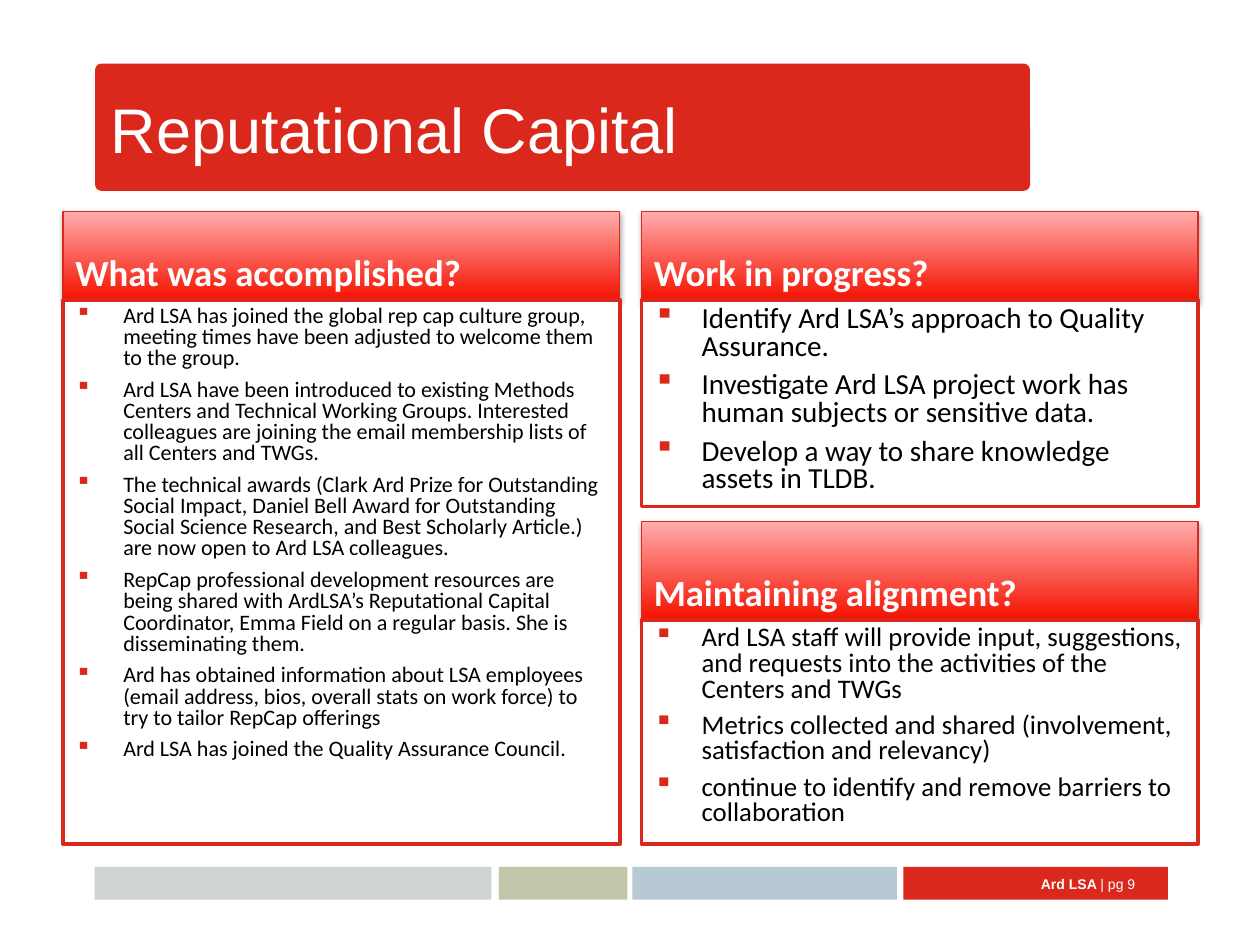
from dataclasses import dataclass

from lxml import etree
from pptx import Presentation
from pptx.dml.color import RGBColor
from pptx.enum.shapes import MSO_SHAPE
from pptx.enum.text import MSO_ANCHOR, PP_ALIGN
from pptx.oxml.ns import qn
from pptx.util import Pt

RECT, ROUND = MSO_SHAPE.RECTANGLE, MSO_SHAPE.ROUNDED_RECTANGLE
TOP, MIDDLE, BOTTOM = MSO_ANCHOR.TOP, MSO_ANCHOR.MIDDLE, MSO_ANCHOR.BOTTOM
LEFT, RIGHT = PP_ALIGN.LEFT, PP_ALIGN.RIGHT

RED, WHITE, BLACK = "DA291C", "FFFFFF", "000000"
GRAD_FROM, GRAD_TO = "F61100", "FFADAC"
PANEL_W, COL_1, COL_2 = 318.2, 36, 366.5
BAR_Y, BAR_H = 495.4, 18.7
INDENT = 27.36


@dataclass
class Bar:
    x: float
    w: float
    color: str


@dataclass
class Panel:
    x: float
    y: float
    head_h: float
    body_h: float
    heading: str
    size: float
    items: list[str]


BARS = [
    Bar(54, 226.8, "D0D3D4"),
    Bar(285.1, 73.4, "C3C6A8"),
    Bar(361.4, 151.2, "B7C9D3"),
    Bar(516.2, 151.2, RED),
]

PANELS = [
    Panel(COL_1, 121, 50.4, 311, "What was accomplished?", 12.6, [
        "Ard LSA has joined the global rep cap culture group, meeting times "
        "have been adjusted to welcome them to the group.",
        "Ard LSA have been introduced to existing Methods Centers and Technical "
        "Working Groups. Interested colleagues are joining the email membership "
        "lists of all Centers and TWGs.",
        "The technical awards (Clark Ard Prize for Outstanding Social Impact, "
        "Daniel Bell Award for Outstanding Social Science Research, and Best "
        "Scholarly Article.) are now open to Ard LSA colleagues.",
        "RepCap professional development resources are being shared with "
        "ArdLSA’s Reputational Capital Coordinator, Emma Field on a regular "
        "basis. She is disseminating them.",
        "Ard has obtained information about LSA employees (email address, bios, "
        "overall stats on work force) to try to tailor RepCap offerings",
        "Ard LSA has joined the Quality Assurance Council.",
    ]),
    Panel(COL_2, 121, 50.4, 118, "Work in progress?", 16.6, [
        "Identify Ard LSA’s approach to Quality Assurance.",
        "Investigate Ard LSA project work has human subjects or sensitive data.",
        "Develop a way to share knowledge assets in TLDB.",
    ]),
    Panel(COL_2, 298.1, 56.1, 128.2, "Maintaining alignment?", 15.3, [
        "Ard LSA staff will provide input, suggestions, and requests into the "
        "activities of the Centers and TWGs",
        "Metrics collected and shared (involvement, satisfaction and relevancy)",
        "continue to identify and remove barriers to collaboration",
    ]),
]


def rgb(value: str) -> RGBColor:
    return RGBColor.from_string(value)


def add_box(s, kind, x, y, w, h, fill=None, line=None, line_w=0.75, adj=None):
    sp = s.shapes.add_shape(kind, Pt(x), Pt(y), Pt(w), Pt(h))
    sp.shadow.inherit = False
    if adj is not None:
        sp.adjustments[0] = adj
    if fill:
        sp.fill.solid()
        sp.fill.fore_color.rgb = rgb(fill)
    if line:
        sp.line.color.rgb = rgb(line)
        sp.line.width = Pt(line_w)
    else:
        sp.line.fill.background()
    return sp


def add_bullet(p) -> None:
    pPr = p._p.get_or_add_pPr()
    pPr.set("marL", str(Pt(INDENT)))
    pPr.set("indent", str(-Pt(INDENT)))
    clr = etree.SubElement(pPr, qn("a:buClr"))
    etree.SubElement(clr, qn("a:srgbClr"), val=RED)
    etree.SubElement(pPr, qn("a:buChar"), char="▪")


def write(sp, paragraphs: list, *, size: float, color: str, font: str = "Calibri",
          bold: bool = False, anchor=TOP, align=LEFT, bullets: bool = False) -> None:
    """Each paragraph is a string or a list of (text, bold) runs."""
    tf = sp.text_frame
    tf.word_wrap = True
    tf.vertical_anchor = anchor
    for i, content in enumerate(paragraphs):
        p = tf.paragraphs[0] if i == 0 else tf.add_paragraph()
        p.alignment = align
        if bullets:
            add_bullet(p)
            p.line_spacing = 0.8
            if i:
                p.space_before = Pt(6)
        runs = [(content, bold)] if isinstance(content, str) else content
        for text, run_bold in runs:
            r = p.add_run()
            r.text = text
            r.font.name = font
            r.font.size = Pt(size)
            r.font.bold = run_bold
            r.font.color.rgb = rgb(color)


def add_gradient(sp) -> None:
    sp.fill.gradient()
    sp.fill.gradient_angle = 90
    for stop, color in zip(sp.fill.gradient_stops, (GRAD_FROM, GRAD_TO)):
        stop.color.rgb = rgb(color)


def add_shadow(sp) -> None:
    effects = sp._element.spPr.find(qn("a:effectLst"))
    shadow = etree.SubElement(effects, qn("a:outerShdw"), blurRad=str(Pt(3.1)),
                              dist=str(Pt(1.8)), dir="5400000", rotWithShape="0")
    clr = etree.SubElement(shadow, qn("a:srgbClr"), val=BLACK)
    etree.SubElement(clr, qn("a:alpha"), val="35000")


def add_panel(s, panel: Panel) -> None:
    head = add_box(s, RECT, panel.x, panel.y, PANEL_W, panel.head_h, line=RED)
    add_gradient(head)
    add_shadow(head)
    write(head, [panel.heading], size=21, color=WHITE, bold=True, anchor=BOTTOM)
    body = add_box(s, RECT, panel.x, panel.y + panel.head_h, PANEL_W, panel.body_h,
                   fill=WHITE, line=RED, line_w=2)
    write(body, panel.items, size=panel.size, color=BLACK, bullets=True)


def main() -> None:
    prs = Presentation()
    prs.slide_width, prs.slide_height = Pt(720), Pt(540)
    s = prs.slides.add_slide(prs.slide_layouts[6])

    # Title banner
    add_box(s, ROUND, 54.7, 36.7, 533.5, 72, fill=RED, line=RED, adj=0.045)
    title = s.shapes.add_textbox(Pt(56.2), Pt(36.7), Pt(531.4), Pt(72.7))
    write(title, ["Reputational Capital"], size=36, color=WHITE, font="Arial",
          anchor=MIDDLE)

    # Footer strip and page number
    for bar in BARS:
        add_box(s, ROUND, bar.x, BAR_Y, bar.w, BAR_H, fill=bar.color, adj=0)
    footer = s.shapes.add_textbox(Pt(563), Pt(491), Pt(92.9), Pt(28.8))
    write(footer, [[("Ard LSA ", True), ("| pg 9", False)]], size=8, color=WHITE,
          font="Arial", anchor=MIDDLE, align=RIGHT)

    # Content panels
    for panel in PANELS:
        add_panel(s, panel)

    prs.save("out.pptx")


if __name__ == "__main__":
    main()
